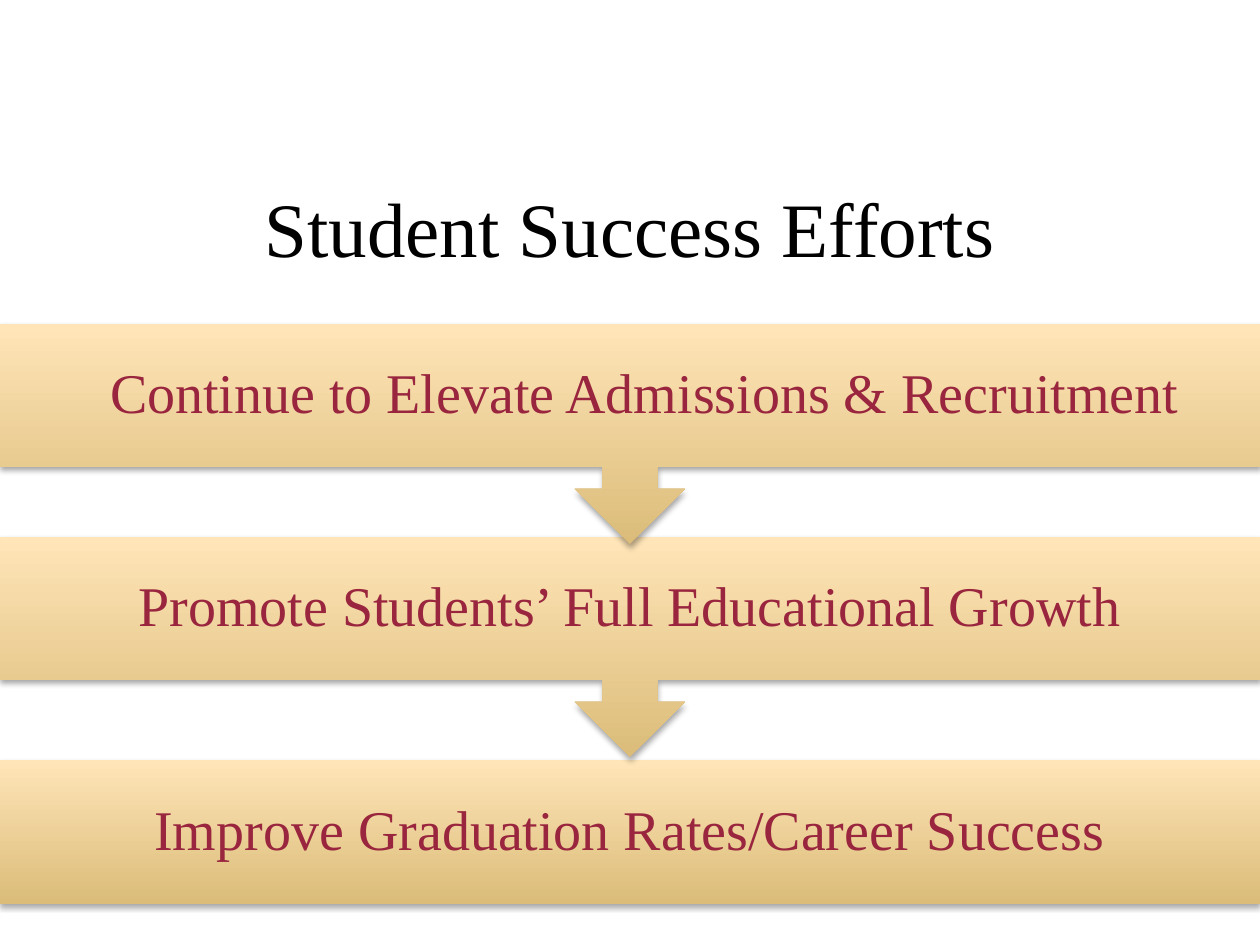
from lxml import etree
from pptx import Presentation
from pptx import util as u
from pptx.dml.color import RGBColor
from pptx.enum import shapes, text
from pptx.oxml import ns

HEADING = "Student Success Efforts"
STEPS = [
    {"label": "Continue to Elevate Admissions & Recruitment", "top": 324, "shift": 30},
    {"label": "Promote Students’ Full Educational Growth", "top": 537, "shift": 0},
    {"label": "Improve Graduation Rates/Career Success", "top": 760, "shift": 0},
]
COLORS = {"ink": "000000", "label": "99263E", "dark": "DBBC79", "light": "FFE5B8",
          "shadow": "000000"}
FONT = "Times New Roman"
WIDTH, HEIGHT = 1260, 945
BAR_HEIGHT, CALLOUT_HEIGHT = 144, 220
INSET = 32


def px(n):
    return u.Emu(round(n * 914400 / 126))


def color(key):
    return RGBColor.from_string(COLORS[key])


def write(frame, words, size, key):
    frame.word_wrap = True
    frame.vertical_anchor = text.MSO_ANCHOR.MIDDLE
    paragraph = frame.paragraphs[0]
    paragraph.text = words
    paragraph.alignment = text.PP_ALIGN.CENTER
    paragraph.font.name = FONT
    paragraph.font.size = u.Pt(size)
    paragraph.font.color.rgb = color(key)
    return paragraph


def add_shadow(shape):
    shape.shadow.inherit = False
    effects = shape.element.spPr.find(ns.qn("a:effectLst"))
    outer = etree.SubElement(effects, ns.qn("a:outerShdw"), blurRad="40000",
                             dist="23000", dir="5400000", rotWithShape="0")
    tint = etree.SubElement(outer, ns.qn("a:srgbClr"), val=COLORS["shadow"])
    etree.SubElement(tint, ns.qn("a:alpha"), val="35000")


def add_step(slide, step, is_last):
    preset = shapes.MSO_SHAPE.RECTANGLE if is_last else shapes.MSO_SHAPE.DOWN_ARROW_CALLOUT
    height = BAR_HEIGHT if is_last else CALLOUT_HEIGHT
    bar = slide.shapes.add_shape(preset, 0, px(step["top"]), px(WIDTH), px(height))
    bar.fill.gradient()
    bar.fill.gradient_angle = 90
    for stop, key in zip(bar.fill.gradient_stops, ("dark", "light")):
        stop.color.rgb = color(key)
    bar.line.fill.background()
    add_shadow(bar)
    frame = bar.text_frame
    frame.margin_left = px(INSET + step["shift"])
    frame.margin_right = frame.margin_top = frame.margin_bottom = px(INSET)
    write(frame, step["label"], 32, "label").line_spacing = 0.9


def main():
    deck = Presentation()
    deck.slide_width, deck.slide_height = px(WIDTH), px(HEIGHT)
    slide = deck.slides.add_slide(deck.slide_layouts[6])
    heading = slide.shapes.add_textbox(px(63), px(160), px(1134), px(134))
    write(heading.text_frame, HEADING, 44, "ink")
    for step in reversed(STEPS):
        add_step(slide, step, step is STEPS[-1])
    deck.save("out.pptx")


if __name__ == "__main__":
    main()
